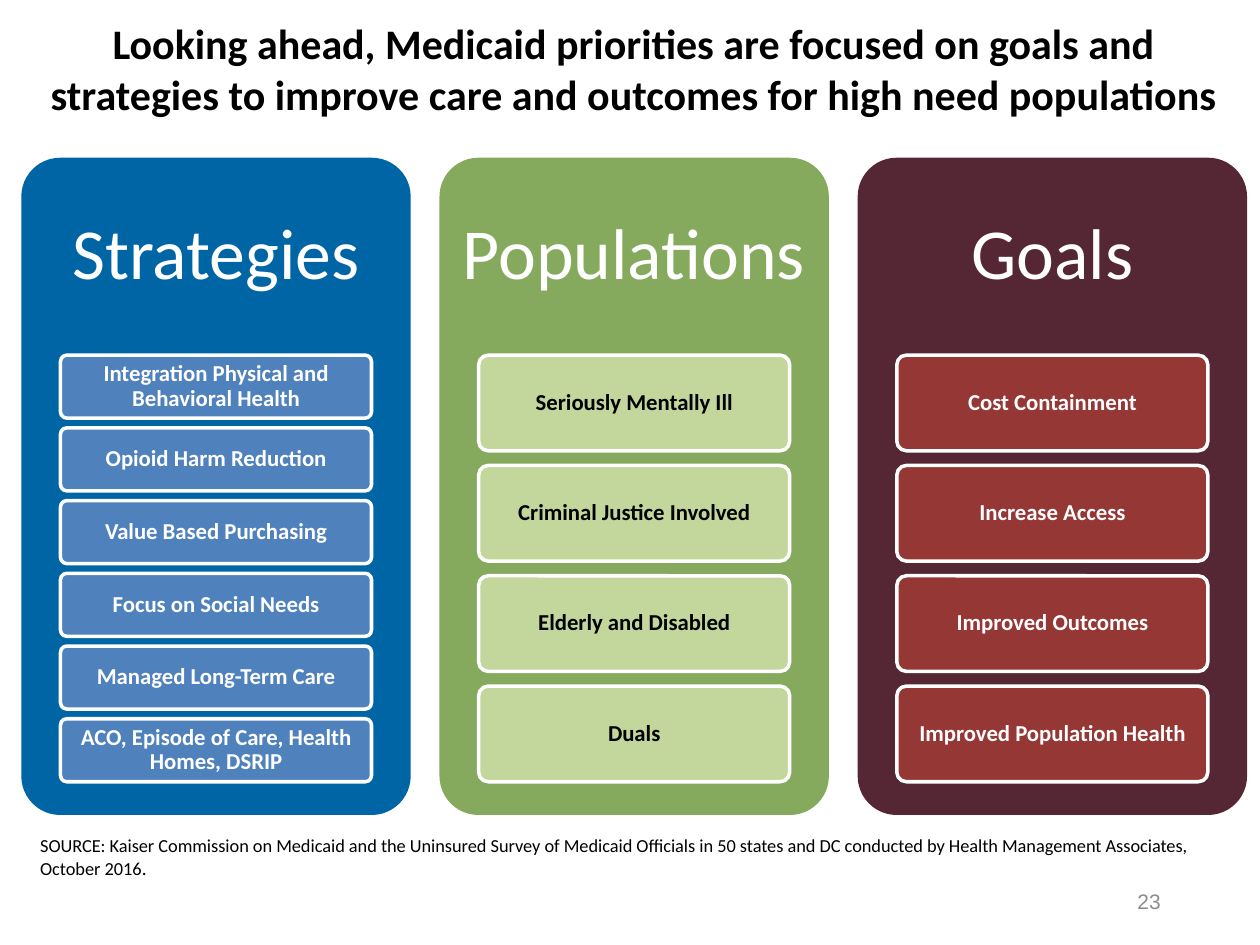
import pptx
import pptx.util
import pptx.dml.color
import pptx.enum.shapes
import pptx.enum.text

Cm = pptx.util.Cm
Pt = pptx.util.Pt
RGBColor = pptx.dml.color.RGBColor
ALIGN = pptx.enum.text.PP_ALIGN
ANCHOR = pptx.enum.text.MSO_ANCHOR
ROUND = pptx.enum.shapes.MSO_SHAPE.ROUNDED_RECTANGLE

WHITE = RGBColor(0xFF, 0xFF, 0xFF)
BLACK = RGBColor(0x00, 0x00, 0x00)
GRAY = RGBColor(0x8C, 0x8C, 0x8C)
BLUE = RGBColor(0x00, 0x65, 0xA5)
SKY = RGBColor(0x4F, 0x81, 0xBD)
GREEN = RGBColor(0x85, 0xAA, 0x5D)
LIME = RGBColor(0xC3, 0xD6, 0x9B)
WINE = RGBColor(0x55, 0x26, 0x33)
RED = RGBColor(0x95, 0x37, 0x35)

deck = pptx.Presentation()
deck.slide_width = Cm(25.4)
deck.slide_height = Cm(19.05)
slide = deck.slides.add_slide(deck.slide_layouts[6])


def write(shape, runs, color, bold=False, font="Calibri", align=ALIGN.CENTER,
          anchor=ANCHOR.MIDDLE, inset=(0.25, 0.13), space=None):
    frame = shape.text_frame
    frame.word_wrap = True
    frame.vertical_anchor = anchor
    frame.margin_left = frame.margin_right = Cm(inset[0])
    frame.margin_top = frame.margin_bottom = Cm(inset[1])
    para = frame.paragraphs[0]
    para.alignment = align
    if space:
        para.line_spacing = space
    for text, size in runs:
        run = para.add_run()
        run.text = text
        run.font.name = font
        run.font.size = Pt(size)
        run.font.bold = bold
        run.font.color.rgb = color


def block(left, top, width, height, fill):
    shape = slide.shapes.add_shape(ROUND, Cm(left), Cm(top), Cm(width), Cm(height))
    shape.adjustments[0] = 0.1
    shape.shadow.inherit = False
    shape.fill.solid()
    shape.fill.fore_color.rgb = fill
    shape.line.fill.background()
    return shape


groups = [
    ("Strategies", BLUE, SKY, WHITE, [
        "Integration Physical and Behavioral Health",
        "Opioid Harm Reduction",
        "Value Based Purchasing",
        "Focus on Social Needs",
        "Managed Long-Term Care",
        "ACO, Episode of Care, Health Homes, DSRIP"]),
    ("Populations", GREEN, LIME, BLACK, [
        "Seriously Mentally Ill",
        "Criminal Justice Involved",
        "Elderly and Disabled",
        "Duals"]),
    ("Goals", WINE, RED, WHITE, [
        "Cost Containment",
        "Increase Access",
        "Improved Outcomes",
        "Improved Population Health"]),
]

span = 8.6
ratio = 2 / 13

for col, (name, back, fill, ink, items) in enumerate(groups):
    left = 0.43 + col * 8.43
    block(left, 3.18, 7.85, 13.25, back)
    head = slide.shapes.add_textbox(Cm(left), Cm(3.18), Cm(7.85), Cm(3.97))
    write(head, [(name, 41)], WHITE, inset=(0.43, 0.43), space=0.9)
    high = span / (len(items) + (len(items) - 1) * ratio)
    for row, item in enumerate(items):
        top = 7.16 + row * high * (1 + ratio)
        card = block(left + 0.79, top, 6.27, high, fill)
        card.line.color.rgb = WHITE
        card.line.width = Pt(2)
        write(card, [(item, 13)], ink, bold=True, inset=(0.14, 0.11), space=0.9)

source = slide.shapes.add_textbox(Cm(0.56), Cm(16.33), Cm(24.38), Cm(1.52))
write(source, [
    ("SOURCE: Kaiser Commission on Medicaid and the Uninsured Survey of Medicaid "
     "Officials in 50 states and DC conducted by Health Management Associates, "
     "October 2016", 10.5),
    (".", 11)], BLACK, align=ALIGN.LEFT, anchor=ANCHOR.BOTTOM)

title = slide.shapes.add_textbox(Cm(0.33), Cm(0.23), Cm(24.89), Cm(2.54))
write(title, [
    ("Looking ahead, Medicaid priorities are focused on goals and strategies to "
     "improve care and outcomes for high need populations", 24)],
    BLACK, bold=True, anchor=ANCHOR.TOP)

page = slide.shapes.add_textbox(Cm(17.93), Cm(17.65), Cm(5.72), Cm(1.02))
write(page, [("23", 12)], GRAY, font="Arial", align=ALIGN.RIGHT)

deck.save("out.pptx")
